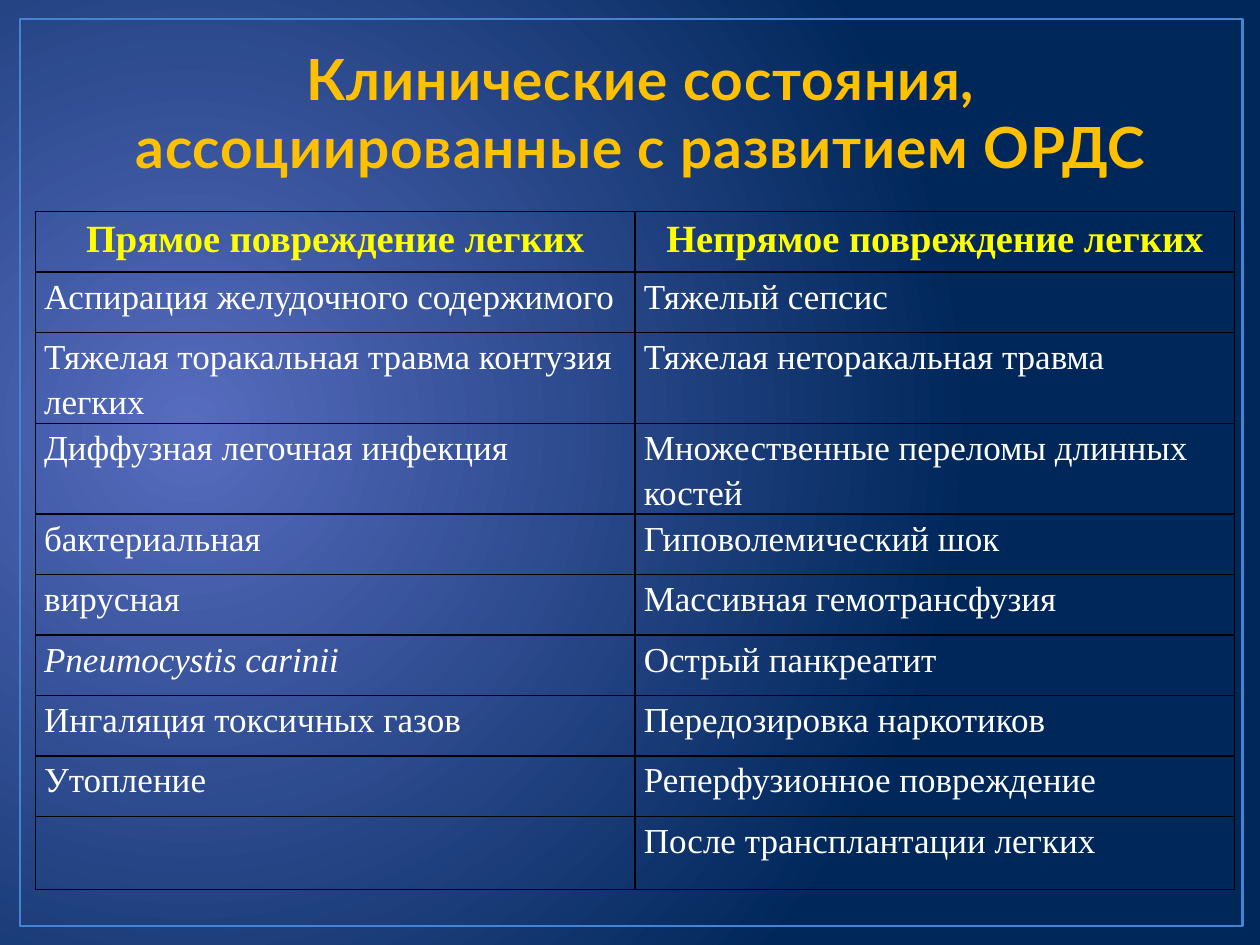
from lxml.etree import SubElement
from pptx import Presentation
from pptx.dml.color import RGBColor
from pptx.enum.shapes import MSO_SHAPE
from pptx.enum.text import MSO_ANCHOR, MSO_AUTO_SIZE, PP_ALIGN
from pptx.oxml import parse_xml
from pptx.oxml.ns import nsdecls, qn
from pptx.util import Inches, Pt

WIDTH, HEIGHT = 10, 7.5
TITLE = "Клинические состояния, ассоциированные с развитием ОРДС"
ROWS = [
    ("Прямое повреждение легких", "Непрямое повреждение легких"),
    ("Аспирация желудочного содержимого", "Тяжелый сепсис"),
    ("Тяжелая торакальная травма контузия легких", "Тяжелая неторакальная травма"),
    ("Диффузная легочная инфекция", "Множественные переломы длинных костей"),
    ("бактериальная", "Гиповолемический шок"),
    ("вирусная", "Массивная гемотрансфузия"),
    ("Pneumocystis carinii", "Острый панкреатит"),
    ("Ингаляция токсичных газов", "Передозировка наркотиков"),
    ("Утопление", "Реперфузионное повреждение"),
    ("", "После трансплантации легких"),
]
ITALIC_TEXT = "Pneumocystis carinii"
ROW_HEIGHT = 0.48
SPECIAL_HEIGHTS = {2: 0.72, 3: 0.72, 9: 0.58}
COLUMN_WIDTH = 4.76
HEADER_FONT = {"name": "Times New Roman", "size": Pt(22), "bold": True}
BODY_FONT = {"name": "Times New Roman", "size": Pt(20), "bold": False}
TITLE_FONT = {"name": "Lato", "size": Pt(32.4), "bold": True}


def color(hex_value):
    return RGBColor.from_string(hex_value)


def set_values(target, values):
    for name, value in values.items():
        setattr(target, name, value)


def format_font(font, values, hex_value):
    set_values(font, values)
    font.color.rgb = color(hex_value)


def set_background(slide, inner, outer):
    """Fill the slide with a round gradient centred left of the middle."""
    stops = "".join(
        f'<a:gs pos="{position}"><a:srgbClr val="{value}"/></a:gs>'
        for position, value in ((0, inner), (100000, outer)))
    background = parse_xml(
        f'<p:bg {nsdecls("p", "a")}><p:bgPr><a:gradFill rotWithShape="1">'
        f'<a:gsLst>{stops}</a:gsLst><a:path path="circle">'
        '<a:fillToRect l="15000" t="50000" r="85000" b="60000"/></a:path>'
        '</a:gradFill><a:effectLst/></p:bgPr></p:bg>')
    slide.element.cSld.insert(0, background)


def add_frame(slide):
    left, top = WIDTH * 0.016, HEIGHT * 0.02
    frame = slide.shapes.add_shape(
        MSO_SHAPE.RECTANGLE, Inches(left), Inches(top),
        Inches(WIDTH * 0.97), Inches(HEIGHT * 0.96))
    frame.shadow.inherit = False
    frame.fill.background()
    frame.line.color.rgb = color("4584D3")
    frame.line.width = Pt(1.5)


def format_title(slide):
    title = slide.shapes.title
    set_values(title, {"left": Inches(0.59), "top": Inches(0.29),
                       "width": Inches(9), "height": Inches(1.73)})
    text_frame = title.text_frame
    text_frame.text = TITLE
    set_values(text_frame, {
        "word_wrap": True, "auto_size": MSO_AUTO_SIZE.NONE,
        "vertical_anchor": MSO_ANCHOR.BOTTOM, "margin_bottom": Inches(0.59)})
    paragraph = text_frame.paragraphs[0]
    set_values(paragraph, {"alignment": PP_ALIGN.CENTER, "line_spacing": 1.0,
                           "space_before": Pt(0)})
    font = paragraph.runs[0].font
    format_font(font, TITLE_FONT, "FFC000")
    paragraph.runs[0]._r.get_or_add_rPr().set("spc", "50")


def add_borders(cell, hex_value, width):
    properties = cell._tc.get_or_add_tcPr()
    for side in ("lnL", "lnR", "lnT", "lnB"):
        line = SubElement(properties, qn(f"a:{side}"), w=str(Pt(width)))
        fill = SubElement(line, qn("a:solidFill"))
        SubElement(fill, qn("a:srgbClr"), val=hex_value)


def fill_cell(cell, text, is_header):
    add_borders(cell, "000000", 1)
    cell.fill.background()
    set_values(cell, {"margin_left": Inches(0.07), "margin_right": Inches(0.07),
                      "margin_top": 0, "margin_bottom": 0})
    if not text:
        return
    paragraph = cell.text_frame.paragraphs[0]
    set_values(paragraph, {
        "alignment": PP_ALIGN.CENTER if is_header else PP_ALIGN.LEFT,
        "line_spacing": 1.15, "space_after": Pt(10)})
    run = paragraph.add_run()
    run.text = text
    format_font(run.font, HEADER_FONT if is_header else BODY_FONT,
                "FFFF00" if is_header else "FFFFFF")
    run.font.italic = text == ITALIC_TEXT


def add_conditions_table(slide):
    heights = [SPECIAL_HEIGHTS.get(index, ROW_HEIGHT) for index in range(len(ROWS))]
    table = slide.shapes.add_table(
        len(ROWS), 2, Inches(0.28), Inches(1.68),
        Inches(2 * COLUMN_WIDTH), Inches(sum(heights))).table
    set_values(table, {"first_row": False, "horz_banding": False})
    for column in table.columns:
        column.width = Inches(COLUMN_WIDTH)
    for row_index, (row, height, texts) in enumerate(zip(table.rows, heights, ROWS)):
        row.height = Inches(height)
        for cell, text in zip(row.cells, texts):
            fill_cell(cell, text, row_index == 0)


def main():
    presentation = Presentation()
    presentation.slide_width = Inches(WIDTH)
    presentation.slide_height = Inches(HEIGHT)
    slide = presentation.slides.add_slide(presentation.slide_layouts[5])
    set_background(slide, "576CBF", "00275A")
    add_frame(slide)
    format_title(slide)
    add_conditions_table(slide)
    presentation.save("out.pptx")


if __name__ == "__main__":
    main()
